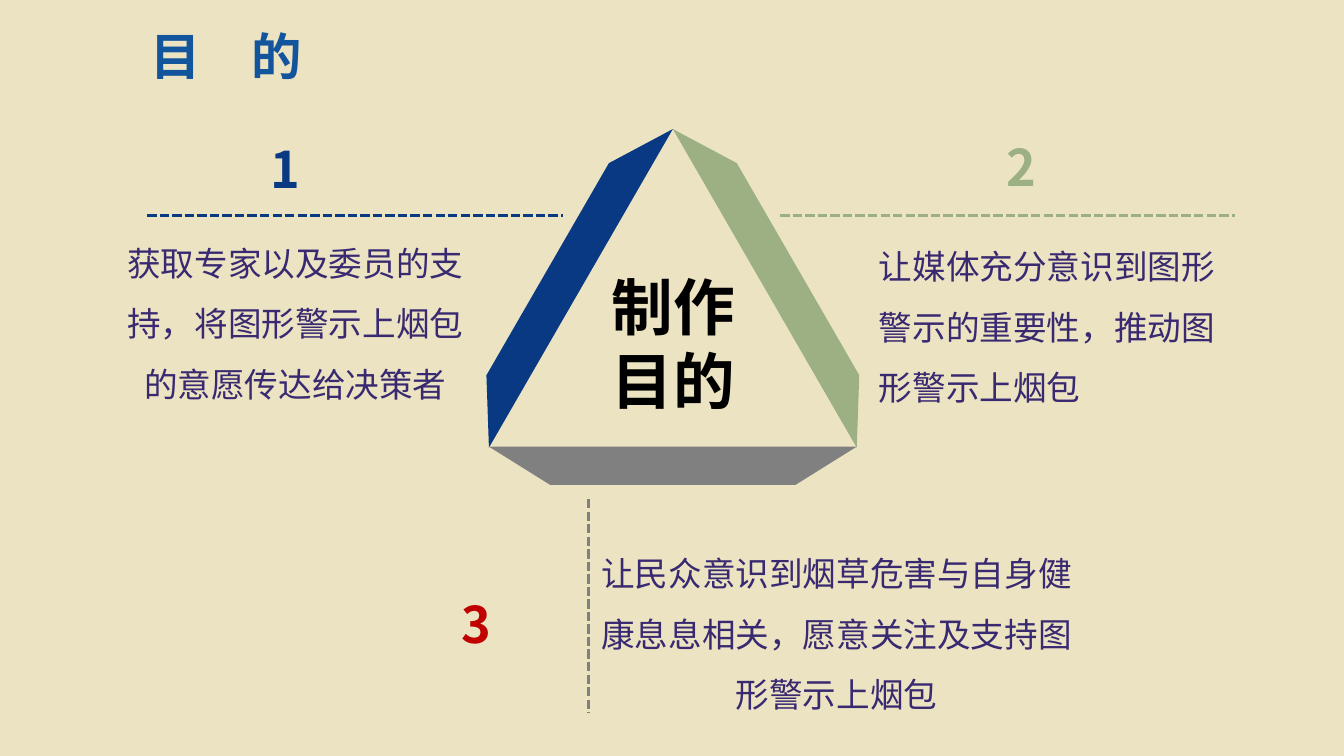
from dataclasses import dataclass
from math import cos, radians, sin

from lxml.etree import SubElement
from pptx import Presentation
from pptx.dml.color import RGBColor
from pptx.enum.dml import MSO_LINE
from pptx.enum.shapes import MSO_CONNECTOR, MSO_SHAPE
from pptx.enum.text import MSO_ANCHOR, PP_ALIGN
from pptx.oxml.ns import qn
from pptx.util import Pt


@dataclass(frozen=True)
class Theme:
    font: str = "Noto Sans CJK SC"
    back: str = "EBE3C2"
    title: str = "13559D"
    body: str = "382971"
    core: str = "000000"
    navy: str = "093983"
    sage: str = "9CB084"
    gray: str = "808080"
    red: str = "C00000"
    head_size: int = 36
    core_size: int = 44
    body_size: int = 24
    rule_width: float = 2.25


@dataclass(frozen=True)
class Reason:
    """One purpose; rule, body and mark are measured from the box corner."""
    box: tuple
    mark: str
    text: str
    tint: str
    ink: str
    rule: tuple
    body: tuple
    spot: tuple
    align: PP_ALIGN = PP_ALIGN.CENTER
    anchor: MSO_ANCHOR = MSO_ANCHOR.TOP


THEME = Theme()
MARK_SIZE = (208, 51)
REASONS = [
    Reason((83.5, 95), "1", "获取专家以及委员的支持，将图形警示上烟包的意愿传达给决策者",
           THEME.navy, THEME.navy, (21.6, 59.1, 319, 59.1),
           (0, 64.1, 255, 136), (102.3, 0)),
    Reason((557.3, 93.6), "2", "让媒体充分意识到图形警示的重要性，推动图形警示上烟包",
           THEME.sage, THEME.sage, (0, 60.5, 324.7, 60.5),
           (70.5, 67.7, 262, 123), (154.8, 0), PP_ALIGN.LEFT),
    Reason((322.6, 356.4), "3", "让民众意识到烟草危害与自身健康息息相关，愿意关注及支持图形警示上烟包",
           THEME.gray, THEME.red, (97.9, 0, 97.9, 152.6),
           (103.6, 48.2, 342.7, 105.8), (0, 63.4), anchor=MSO_ANCHOR.BOTTOM),
]


def color(code):
    return RGBColor.from_string(code)


def paint(shape, code):
    shape.shadow.inherit = False
    shape.fill.solid()
    shape.fill.fore_color.rgb = color(code)
    shape.line.fill.background()


def write(shapes, box, text, size, ink, bold=True, align=PP_ALIGN.LEFT):
    """Add a wrapped text box in one style and return its frame."""
    frame = shapes.add_textbox(*map(Pt, box)).text_frame
    frame.word_wrap = True
    frame.text = text
    para = frame.paragraphs[0]
    para.alignment = align
    run = para.runs[0]
    run.font.size = Pt(size)
    run.font.bold = bold
    run.font.color.rgb = color(ink)
    run.font.name = THEME.font
    SubElement(run._r.get_or_add_rPr(), qn("a:ea")).set("typeface", THEME.font)
    return frame


def dash(shapes, ends, tint):
    line = shapes.add_connector(MSO_CONNECTOR.STRAIGHT, *map(Pt, ends))
    line.line.color.rgb = color(tint)
    line.line.width = Pt(THEME.rule_width)
    line.line.dash_style = MSO_LINE.SQUARE_DOT
    SubElement(line._element.spPr, qn("a:effectLst"))


def prism(shapes, box):
    """Draw a triangle of three bevelled bars around the core words."""
    left, top, width, height = box
    deep, inset = 27.4, 43.9
    base = top + height - deep
    mid = left + width / 2
    for side, tint in ((1, THEME.sage), (-1, THEME.navy)):
        x = mid + side * (width / 4 + deep / 2 * cos(radians(30)))
        y = (top + base) / 2 - deep / 2 * sin(radians(30))
        bar = shapes.add_shape(MSO_SHAPE.TRAPEZOID, Pt(x - width / 2),
                               Pt(y - deep / 2), Pt(width), Pt(deep))
        bar.adjustments[0] = inset / deep
        bar.rotation = side * 60
        paint(bar, tint)
    right, low = left + width, base + deep
    pen = shapes.build_freeform(Pt(left), Pt(base))
    pen.add_line_segments([(Pt(x), Pt(y)) for x, y in (
        (right, base), (right - inset, low), (left + inset, low))])
    paint(pen.convert_to_shape(), THEME.gray)
    write(shapes, (left + 80.6, top + 95.6, 108, 114), "制作目的",
          THEME.core_size, THEME.core)


def reason(shapes, item):
    left, top = item.box
    group = shapes.add_group_shape().shapes
    x1, y1, x2, y2 = item.rule
    dash(group, (left + x1, top + y1, left + x2, top + y2), item.tint)
    x, y, width, height = item.body
    frame = write(group, (left + x, top + y, width, height), item.text,
                  THEME.body_size, THEME.body, False, item.align)
    frame.margin_left = frame.margin_right = 0
    frame.margin_top = frame.margin_bottom = 0
    frame.vertical_anchor = item.anchor
    frame.paragraphs[0].line_spacing = 1.5
    x, y = item.spot
    write(group, (left + x, top + y, *MARK_SIZE), item.mark,
          THEME.head_size, item.ink)


def main():
    deck = Presentation()
    deck.slide_width, deck.slide_height = Pt(960), Pt(540)
    slide = deck.slides.add_slide(deck.slide_layouts[6])
    slide.background.fill.solid()
    slide.background.fill.fore_color.rgb = color(THEME.back)
    prism(slide.shapes, (349.2, 93, 262.8, 253.4))
    for item in REASONS:
        reason(slide.shapes, item)
    write(slide.shapes, (25.2, 14.4, 273, 51), "目　的",
          THEME.head_size, THEME.title, align=PP_ALIGN.CENTER)
    deck.save("out.pptx")


if __name__ == "__main__":
    main()
